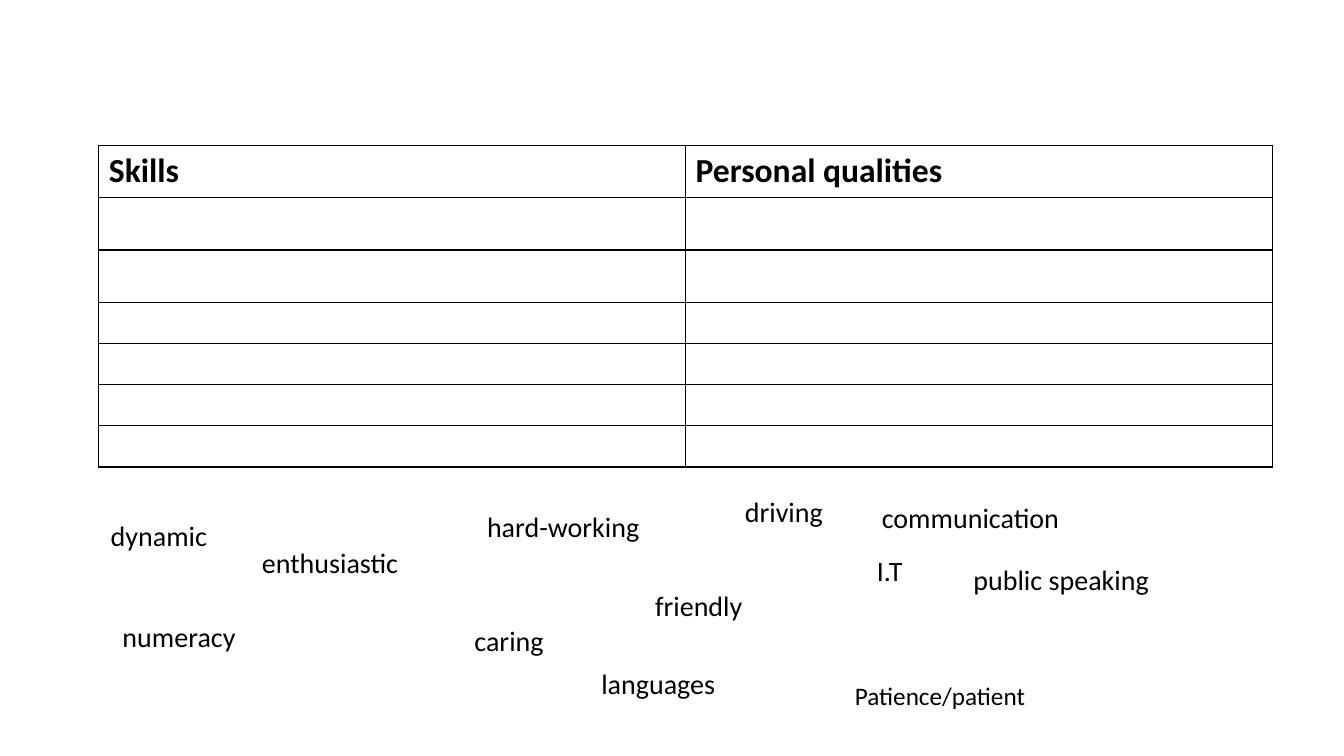
from dataclasses import dataclass

from lxml import etree
from pptx import Presentation
from pptx import util as u
from pptx.dml import color
from pptx.enum import text
from pptx.oxml import ns


@dataclass(frozen=True)
class Theme:
    font: str = "Calibri"
    ink: str = "000000"
    paper: str = "FFFFFF"
    heading: int = 24
    word: int = 20
    small_word: int = 18
    border: int = 1


class WorksheetSlide:
    """Draws elements on a 160 by 90 grid in one theme."""

    def __init__(self, presentation, theme):
        self.theme = theme
        self.column = presentation.slide_width / 160
        self.row = presentation.slide_height / 90
        self.slide = presentation.slides.add_slide(presentation.slide_layouts[6])

    def across(self, columns):
        return u.Emu(round(columns * self.column))

    def down(self, rows):
        return u.Emu(round(rows * self.row))

    def set_text(self, text_frame, wording, size, bold=False):
        text_frame.text = wording
        for run in text_frame.paragraphs[0].runs:
            run.font.name = self.theme.font
            run.font.size = u.Pt(size)
            run.font.bold = bold
            run.font.color.rgb = color.RGBColor.from_string(self.theme.ink)

    def add_word(self, wording, left, top, width, size, height):
        shape = self.slide.shapes.add_textbox(
            self.across(left), self.down(top), self.across(width), self.down(height))
        shape.text_frame.word_wrap = True
        shape.text_frame.auto_size = text.MSO_AUTO_SIZE.SHAPE_TO_FIT_TEXT
        self.set_text(shape.text_frame, wording, size)

    def add_table(self, headings, left, top, width, row_heights):
        table = self.slide.shapes.add_table(
            len(row_heights), len(headings), self.across(left), self.down(top),
            self.across(width), self.down(sum(row_heights))).table
        table.horz_banding = False
        for row, height in zip(table.rows, row_heights):
            row.height = self.down(height)
        for cell in table.iter_cells():
            self.style_cell(cell)
        for cell, heading in zip(table.rows[0].cells, headings):
            self.set_text(cell.text_frame, heading, self.theme.heading, bold=True)

    def style_cell(self, cell):
        properties = cell._tc.get_or_add_tcPr()
        for side in ("a:lnL", "a:lnR", "a:lnT", "a:lnB"):
            line = etree.SubElement(
                properties, ns.qn(side), w=str(u.Pt(self.theme.border)))
            fill = etree.SubElement(line, ns.qn("a:solidFill"))
            etree.SubElement(fill, ns.qn("a:srgbClr"), val=self.theme.ink)
        cell.fill.solid()
        cell.fill.fore_color.rgb = color.RGBColor.from_string(self.theme.paper)


def main():
    presentation = Presentation()
    presentation.slide_width = u.Inches(13.33)
    presentation.slide_height = u.Inches(7.5)
    theme = Theme()
    worksheet = WorksheetSlide(presentation, theme)

    worksheet.add_table(("Skills", "Personal qualities"), 11.76, 17.28, 139.68,
                        [6.24] * 3 + [4.9] * 4)
    words = (
        ("driving", 87.5, 58.3, 15.4),
        ("hard-working", 56.8, 60.1, 21.7),
        ("numeracy", 13.4, 73.2, 17.3),
        ("enthusiastic", 30, 64.3, 20.3),
        ("I.T", 103.2, 65.3, 9.5),
        ("caring", 55.3, 73.6, 14.9),
        ("communication", 103.8, 59, 25.1),
        ("languages", 70.4, 78.8, 18),
        ("public speaking", 114.7, 66.4, 24),
        ("friendly", 76.8, 69.5, 17),
        ("dynamic", 12, 61.1, 14.9),
    )
    for wording, left, top, width in words:
        worksheet.add_word(wording, left, top, width, theme.word, 5.25)
    worksheet.add_word("Patience/patient", 100.6, 80.4, 24.8, theme.small_word, 4.85)
    presentation.save("out.pptx")


if __name__ == "__main__":
    main()
